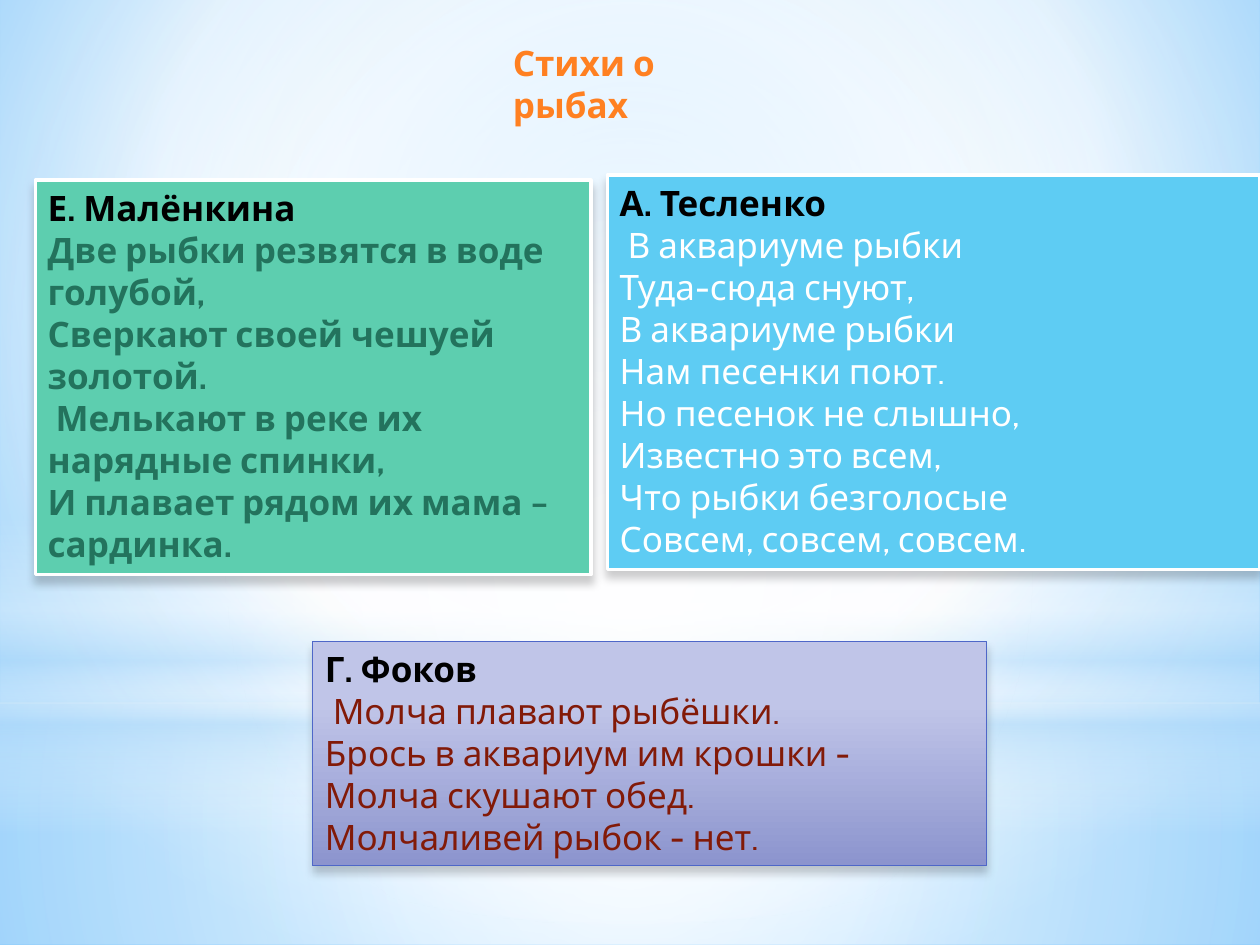
from pptx import Presentation
from pptx.dml.color import RGBColor
from pptx.enum.shapes import MSO_SHAPE
from pptx.enum.text import MSO_ANCHOR, PP_ALIGN
from pptx.oxml import parse_xml
from pptx.oxml.ns import nsdecls, qn
from pptx.util import Inches, Pt

RECT, OVAL = MSO_SHAPE.RECTANGLE, MSO_SHAPE.OVAL
TOP, LEFT = MSO_ANCHOR.TOP, PP_ALIGN.LEFT

THEME = {
    "font": "Cabin", "size": Pt(20),
    "title": "FF8021", "author": "000000", "shadow": "000000",
    "white": "FFFFFF", "haze": "B4DCFA", "sky": "9ED5FF", "deep": "5BB9FF",
    "blue": "5ECCF3", "green": "5DCEAF", "dark_green": "23735D",
    "lilac": "C0C5E8", "violet": "8C94CE", "indigo": "4E67C8", "brown": "821A08",
}
WHITE, HAZE = THEME["white"], THEME["haze"]
CENTER = (50, 50, 50, 50)


def set_gradient(props, stops, focus=None):
    """Swap a solid fill for a gradient: circular around focus, else top to bottom.

    Stops are (position %, colour, opacity %).
    """
    gs = "".join(
        f'<a:gs pos="{pos * 1000}"><a:srgbClr val="{color}">'
        f'<a:alpha val="{alpha * 1000}"/></a:srgbClr></a:gs>'
        for pos, color, alpha in stops)
    if focus:
        sides = " ".join(f'{k}="{v * 1000}"' for k, v in zip("ltrb", focus))
        course = f'<a:path path="circle"><a:fillToRect {sides}/></a:path>'
    else:
        course = '<a:lin ang="5400000" scaled="0"/>'
    props.replace(props.find(qn("a:solidFill")), parse_xml(
        f'<a:gradFill {nsdecls("a")} rotWithShape="1">'
        f"<a:gsLst>{gs}</a:gsLst>{course}</a:gradFill>"))


def style_paragraph(p, color, bold):
    p.alignment = LEFT
    p.font.name, p.font.size, p.font.bold = THEME["font"], THEME["size"], bold
    p.font.color.rgb = RGBColor.from_string(color)


prs = Presentation()
prs.slide_width, prs.slide_height = Inches(10), Inches(7.5)
s = prs.slides.add_slide(prs.slide_layouts[5])

# Sky background and its soft light layers
s.background.fill.solid()
set_gradient(s.background._cSld.bg.bgPr,
             [(0, THEME["sky"], 100), (60, WHITE, 100), (100, THEME["deep"], 100)],
             (20, 10, 20, 60))
layers = [
    (RECT, 5.58, 1.92, [(0, WHITE, 91), (37, WHITE, 76), (100, HAZE, 79)], CENTER),
    (RECT, 0, 5.58, [(0, WHITE, 89), (48, WHITE, 62), (100, HAZE, 79)], CENTER),
    (RECT, 4.12, 2.5, [(0, WHITE, 0), (29, WHITE, 30), (45, HAZE, 40),
                       (55, WHITE, 26), (65, HAZE, 60), (100, WHITE, 0)], None),
    (OVAL, 1.75, 5.58, [(0, WHITE, 100), (56, WHITE, 0)], CENTER),
]
for kind, top, height, stops, focus in layers:
    sp = s.shapes.add_shape(kind, 0, Inches(top), prs.slide_width, Inches(height))
    sp.fill.solid()
    set_gradient(sp._element.spPr, stops, focus)
    sp.line.fill.background()
    sp.shadow.inherit = False

# Title, raised above the light layers
title = s.shapes.title
s.shapes._spTree.append(title._element)
title.left, title.top = Inches(3.97), Inches(0.28)
title.width, title.height = Inches(2.18), Inches(0.44)
tf = title.text_frame
tf.text = "Стихи о рыбах"
tf.word_wrap, tf.vertical_anchor = True, TOP
style_paragraph(tf.paragraphs[0], THEME["title"], True)

# Poem panels: box, fill, line colour, line width, verse colour, bold verse, text
poems = [
    ((4.82, 1.39, 5.18, 3.13), "blue", "white", 2, "white", False,
     ["А. Тесленко", " В аквариуме рыбки", "Туда-сюда снуют,",
      "В аквариуме рыбки", "Нам песенки поют.", "Но песенок не слышно,",
      "Известно это всем,", "Что рыбки безголосые", "Совсем, совсем, совсем."]),
    ((0.28, 1.43, 4.41, 3.13), "green", "white", 2, "dark_green", True,
     ["Е. Малёнкина", "Две рыбки резвятся в воде голубой,",
      "Сверкают своей чешуей золотой.",
      " Мелькают в реке их нарядные спинки,",
      "И плавает рядом их мама – сардинка."]),
    ((2.48, 5.09, 5.35, 1.78), "lilac", "indigo", 0.75, "brown", False,
     ["Г. Фоков", " Молча плавают рыбёшки.", "Брось в аквариум им крошки -",
      "Молча скушают обед.", "Молчаливей рыбок - нет."]),
]
for box, fill, line, width, verse, bold, lines in poems:
    sp = s.shapes.add_shape(RECT, *map(Inches, box))
    sp.fill.solid()
    sp.fill.fore_color.rgb = RGBColor.from_string(THEME[fill])
    if fill == "lilac":
        set_gradient(sp._element.spPr,
                     [(28, THEME["lilac"], 100), (100, THEME["violet"], 100)])
    sp.line.color.rgb = RGBColor.from_string(THEME[line])
    sp.line.width = Pt(width)
    sp.shadow.inherit = False
    sp._element.spPr.find(qn("a:effectLst")).append(parse_xml(
        f'<a:outerShdw {nsdecls("a")} blurRad="{Pt(5)}" dist="{Pt(4)}" dir="5400000" '
        f'rotWithShape="0"><a:srgbClr val="{THEME["shadow"]}">'
        '<a:alpha val="20000"/></a:srgbClr></a:outerShdw>'))
    tf = sp.text_frame
    tf.word_wrap, tf.vertical_anchor = True, TOP
    tf.text = "\n".join(lines)
    for i, p in enumerate(tf.paragraphs):
        style_paragraph(p, THEME[verse if i else "author"], bold or i == 0)

prs.save("out.pptx")
